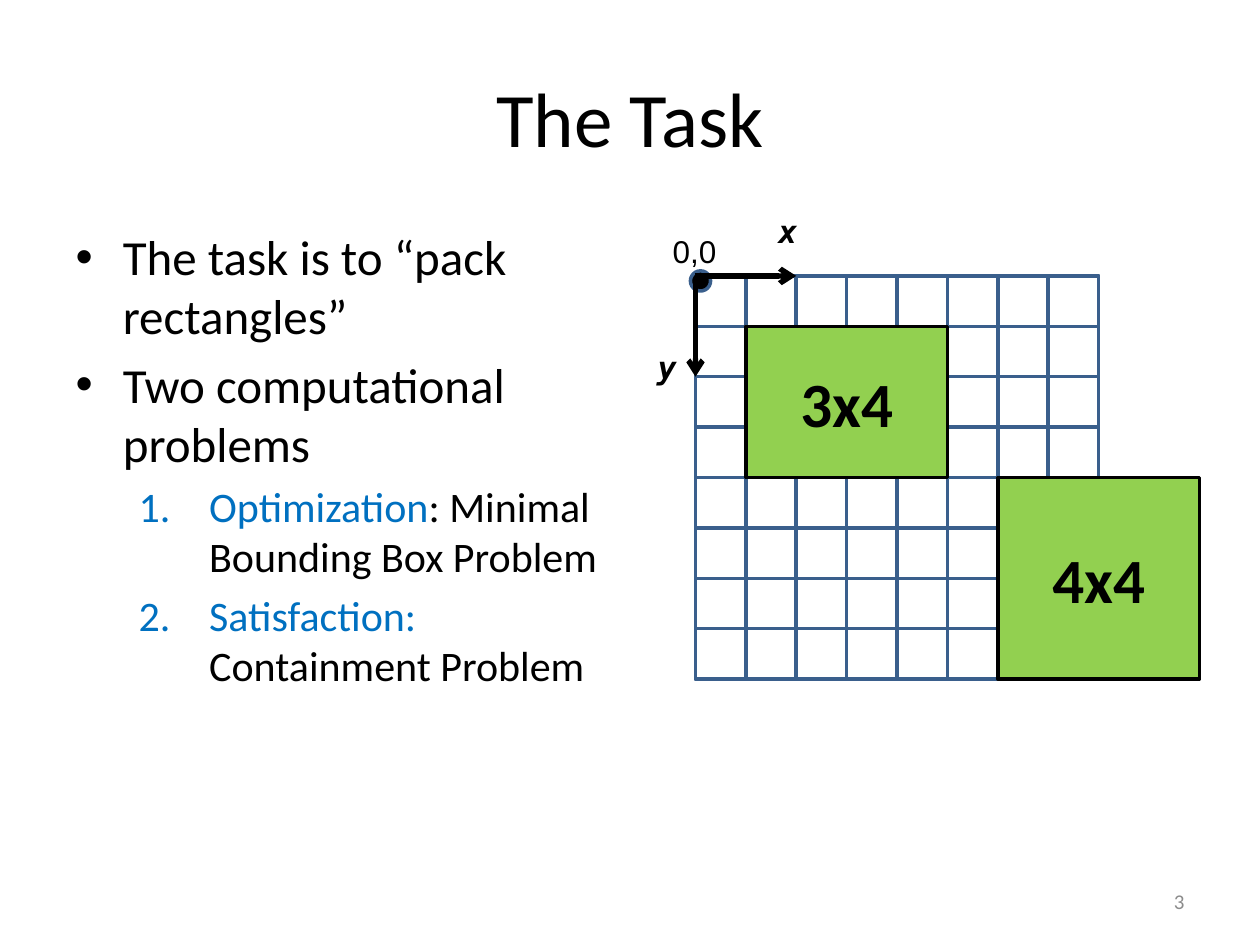
import itertools

import pptx
import pptx.dml.color
import pptx.enum.shapes
import pptx.enum.text
import pptx.oxml.ns
import pptx.util
from lxml import etree

Inches, Pt = pptx.util.Inches, pptx.util.Pt
qn = pptx.oxml.ns.qn
SHAPE = pptx.enum.shapes.MSO_SHAPE
ALIGN = pptx.enum.text.PP_ALIGN
ANCHOR = pptx.enum.text.MSO_ANCHOR

BLACK, GRID_BLUE, GREEN, TERM_BLUE, GREY = "000000", "3A5F8C", "92D050", "0070C0", "8C8C8C"
CELL, GRID_SIZE = 0.4, 8
GRID_LEFT, GRID_TOP = 5.52, 2.19
# Packed rectangles: label, column, row, columns wide, rows high
PACKED = [("3x4", 1, 1, 4, 3), ("4x4", 6, 4, 4, 4)]
# Cells left out beneath the packed rectangles
COVERED = {(2, 2), (3, 2), (6, 5), (6, 6), (7, 5), (7, 6)}


def colour(hex_code):
    return pptx.dml.color.RGBColor.from_string(hex_code)


def grid_point(column, row):
    return Inches(GRID_LEFT + column * CELL), Inches(GRID_TOP + row * CELL)


def style_font(font, size, hex_code, name="Calibri", bold=False, italic=False):
    font.size, font.name = Pt(size), name
    font.bold, font.italic = bold, italic
    font.color.rgb = colour(hex_code)


def place(shape, left, top, width, height):
    shape.left, shape.top = Inches(left), Inches(top)
    shape.width, shape.height = Inches(width), Inches(height)


def add_block(slide, column, row, columns=1, rows=1, fill=None, line=GRID_BLUE, kind=SHAPE.RECTANGLE):
    """Add an outlined shape measured in grid cells."""
    block = slide.shapes.add_shape(
        kind, *grid_point(column, row), Inches(columns * CELL), Inches(rows * CELL))
    block.shadow.inherit = False
    if fill:
        block.fill.solid()
        block.fill.fore_color.rgb = colour(fill)
    else:
        block.fill.background()
    block.line.color.rgb = colour(line)
    block.line.width = Pt(2)
    return block


def add_packed(slide, label, column, row, columns, rows):
    frame = add_block(slide, column, row, columns, rows, GREEN, BLACK).text_frame
    frame.text = label
    frame.vertical_anchor = ANCHOR.MIDDLE
    frame.paragraphs[0].alignment = ALIGN.CENTER
    style_font(frame.paragraphs[0].font, 36, BLACK, bold=True)


def add_axis(slide, start, end):
    axis = slide.shapes.add_connector(
        pptx.enum.shapes.MSO_CONNECTOR.STRAIGHT, *grid_point(*start), *grid_point(*end))
    axis.line.color.rgb = colour(BLACK)
    axis.line.width = Pt(3)
    etree.SubElement(axis.line._get_or_add_ln(), qn("a:tailEnd"), type="arrow")
    etree.SubElement(axis._element.spPr, qn("a:effectLst"))


def add_label(slide, text, left, top, width, size=18, hex_code=BLACK, align=ALIGN.LEFT, **font):
    label = slide.shapes.add_textbox(Inches(left), Inches(top), Inches(width), Inches(0.4))
    frame = label.text_frame
    frame.word_wrap = True
    frame.text = text
    frame.paragraphs[0].alignment = align
    style_font(frame.paragraphs[0].font, size, hex_code, **font)
    return frame


def fill_title(slide):
    title = slide.shapes.title
    place(title, 0.5, 0.3, 9, 1.25)
    title.text_frame.text = "The Task"
    style_font(title.text_frame.paragraphs[0].font, 44, BLACK)


def number_paragraph(paragraph):
    paragraph.level = 1
    properties = paragraph._p.get_or_add_pPr()
    properties.set("marL", str(Inches(1.06)))
    properties.set("indent", str(Inches(-0.56)))
    etree.SubElement(properties, qn("a:buFont"), typeface="+mj-lt")
    etree.SubElement(properties, qn("a:buAutoNum"), type="arabicPeriod")


def fill_body(slide):
    body = slide.placeholders[1]
    place(body, 0.5, 1.75, 4.62, 5.31)
    frame = body.text_frame
    frame.auto_size = pptx.enum.text.MSO_AUTO_SIZE.NONE
    points = ["The task is to “pack rectangles”", "Two computational problems"]
    problems = [("Optimization", ": Minimal Bounding Box Problem"),
                ("Satisfaction: ", "Containment Problem")]
    frame.text = "\n".join(points)
    for paragraph in frame.paragraphs:
        style_font(paragraph.font, 28, BLACK)
    for parts in problems:
        paragraph = frame.add_paragraph()
        number_paragraph(paragraph)
        for text, hex_code in zip(parts, (TERM_BLUE, BLACK)):
            run = paragraph.add_run()
            run.text = text
            style_font(run.font, 24, hex_code)


def draw_grid(slide):
    add_block(slide, 0, 0, GRID_SIZE, GRID_SIZE)
    for column, row in itertools.product(range(GRID_SIZE), repeat=2):
        if (column, row) not in COVERED:
            add_block(slide, column, row)
    for rectangle in PACKED:
        add_packed(slide, *rectangle)


def draw_axes(slide):
    add_block(slide, -0.1, -0.1, 0.4, 0.4, BLACK, kind=SHAPE.OVAL)
    add_axis(slide, (0, 0.1), (0, 2))
    add_axis(slide, (0, 0), (2, 0))
    for name, left, top in (("x", 6.08, 1.63), ("y", 5.12, 2.71)):
        add_label(slide, name, left, top, 0.32, name="DejaVu Sans Mono", bold=True, italic=True)
    add_label(slide, "0,0", 5.24, 1.79, 0.88, name="Arial")


def main():
    deck = pptx.Presentation()
    deck.slide_width, deck.slide_height = Inches(10), Inches(7.5)
    slide = deck.slides.add_slide(deck.slide_layouts[1])
    fill_title(slide)
    fill_body(slide)
    draw_grid(slide)
    draw_axes(slide)
    page_number = add_label(slide, "3", 7.17, 6.95, 2.33, 12, GREY, ALIGN.RIGHT)
    page_number.vertical_anchor = ANCHOR.MIDDLE
    deck.save("out.pptx")


if __name__ == "__main__":
    main()
